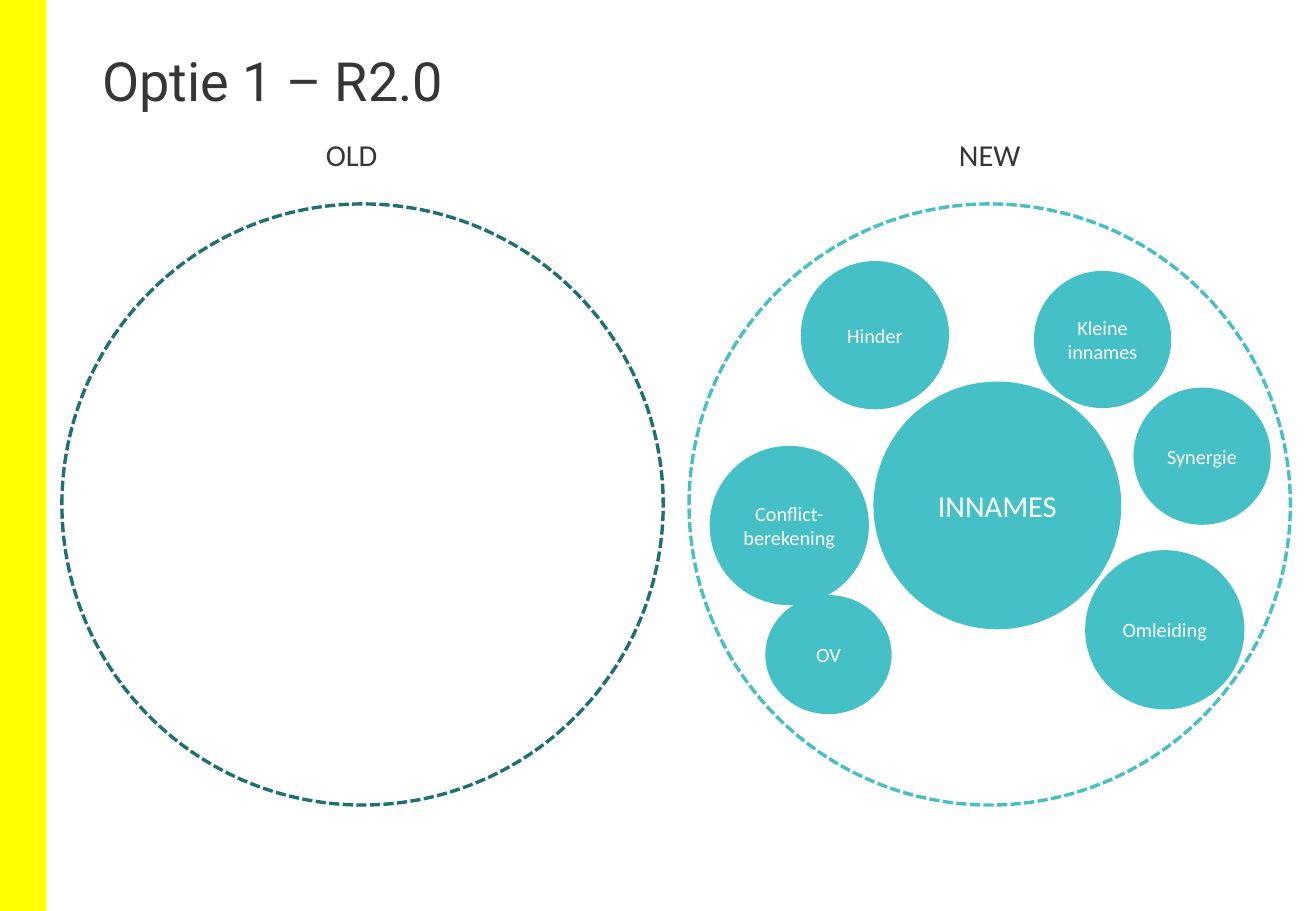
from pptx import Presentation
from pptx.dml.color import RGBColor
from pptx.enum.dml import MSO_LINE
from pptx.enum.shapes import MSO_SHAPE
from pptx.enum.text import MSO_ANCHOR, PP_ALIGN
from pptx.util import Cm, Pt

TITLE = "Optie 1 – R2.0"
DARK, TEAL, WHITE, YELLOW = "373636", "44C0C6", "FFFFFF", "FFFF00"

# label, label centre x, ring centre x, ring colour
RINGS = [
    ("OLD", 7.35, 7.58, "1D7074"),
    ("NEW", 20.69, 20.69, TEAL),
]
RING_Y, RING_SIZE = 10.55, 12.57
LABEL_TOP, LABEL_WIDTH, LABEL_HEIGHT = 2.72, 1.8, 1.02

# text, centre x, centre y, width, height, text size
BUBBLES = [
    ("INNAMES", 20.85, 10.57, 5.18, 5.18, 18),
    ("Kleine innames", 23.05, 7.1, 2.87, 2.87, 12),
    ("Hinder", 18.29, 7.01, 3.1, 3.1, 12),
    ("Omleiding", 24.35, 13.17, 3.33, 3.33, 12),
    ("Conflict-berekening", 16.5, 10.99, 3.33, 3.33, 12),
    ("OV", 17.32, 13.69, 2.64, 2.49, 12),
    ("Synergie", 25.13, 9.54, 2.87, 2.87, 12),
]


def rgb(hex_color):
    return RGBColor.from_string(hex_color)


def write(frame, text, size, color=DARK, font="Calibri", align=PP_ALIGN.CENTER,
          anchor=MSO_ANCHOR.TOP, wrap=True, inset=None, line_spacing=None):
    frame.word_wrap = wrap
    frame.vertical_anchor = anchor
    if inset is not None:
        frame.margin_left = frame.margin_right = Cm(inset)
        frame.margin_top = frame.margin_bottom = Cm(inset)
    paragraph = frame.paragraphs[0]
    paragraph.text = text
    paragraph.alignment = align
    paragraph.line_spacing = line_spacing
    paragraph.font.size = Pt(size)
    paragraph.font.name = font
    paragraph.font.color.rgb = rgb(color)


def add_filled(slide, kind, left, top, width, height, fill=None):
    """Add a shape without outline or shadow; without a fill it is see-through."""
    shape = slide.shapes.add_shape(kind, Cm(left), Cm(top), Cm(width), Cm(height))
    shape.shadow.inherit = False
    shape.line.fill.background()
    if fill:
        shape.fill.solid()
        shape.fill.fore_color.rgb = rgb(fill)
    else:
        shape.fill.background()
    return shape


def add_circle(slide, x, y, width, height, fill=None):
    """Add an ellipse around the centre x, y."""
    return add_filled(slide, MSO_SHAPE.OVAL, x - width / 2, y - height / 2,
                      width, height, fill)


def main():
    deck = Presentation()
    deck.slide_width, deck.slide_height = Cm(27.51), Cm(19.05)
    slide = deck.slides.add_slide(deck.slide_layouts[5])

    add_filled(slide, MSO_SHAPE.RECTANGLE, 0, 0, 0.97, 19.05, YELLOW)

    title = slide.shapes.title
    title.left, title.top, title.width, title.height = Cm(1.88), Cm(1.02), Cm(23.72), Cm(2.74)
    write(title.text_frame, TITLE, 32, font="Roboto", align=PP_ALIGN.LEFT, line_spacing=0.9)

    for label, label_x, ring_x, color in RINGS:
        ring = add_circle(slide, ring_x, RING_Y, RING_SIZE, RING_SIZE)
        ring.line.color.rgb = rgb(color)
        ring.line.width = Pt(2)
        ring.line.dash_style = MSO_LINE.SQUARE_DOT
        heading = slide.shapes.add_textbox(Cm(label_x - LABEL_WIDTH / 2), Cm(LABEL_TOP),
                                           Cm(LABEL_WIDTH), Cm(LABEL_HEIGHT))
        write(heading.text_frame, label, 18, wrap=False)

    for text, x, y, width, height, size in BUBBLES:
        bubble = add_circle(slide, x, y, width, height, TEAL)
        write(bubble.text_frame, text, size, color=WHITE, anchor=MSO_ANCHOR.MIDDLE, inset=0)

    deck.save("out.pptx")


if __name__ == "__main__":
    main()
